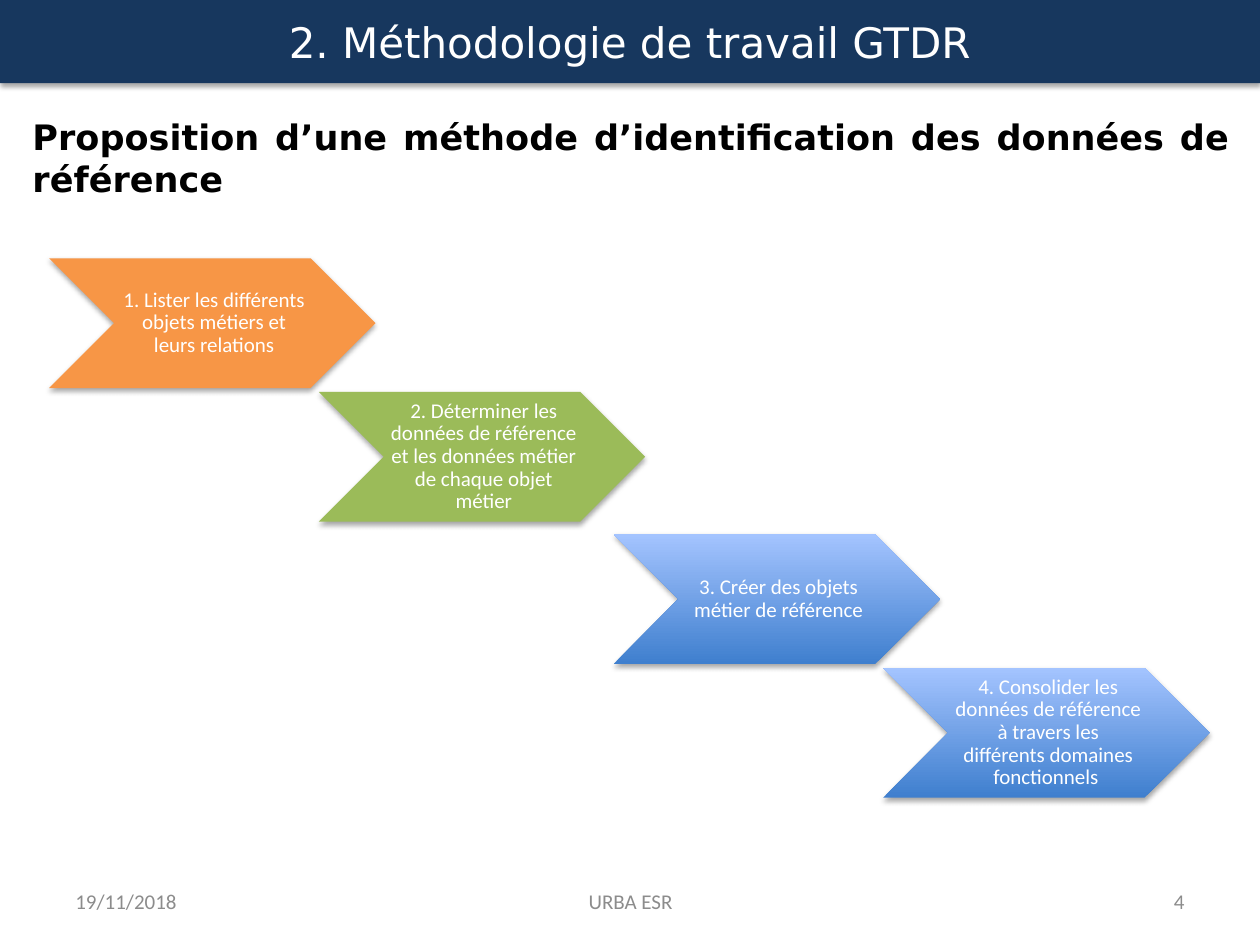
from lxml import etree
from pptx import Presentation
from pptx.dml.color import RGBColor
from pptx.enum import shapes, text
from pptx.oxml import ns
from pptx.util import Inches, Pt

HEADING = "2. Méthodologie de travail GTDR"
PROPOSITION = "Proposition d’une méthode d’identification des données de référence "
# wording, left, top, fill
STEPS = [
    ("1. Lister les différents objets métiers et leurs relations",
     0.39, 2.05, "orange"),
    ("2. Déterminer les données de référence et les données métier de chaque objet métier",
     2.53, 3.11, "green"),
    ("3. Créer des objets métier de référence",
     4.87, 4.24, "blue"),
    ("4. Consolider les données de référence à travers les différents domaines fonctionnels ",
     7.01, 5.3, "blue"),
]
# wording, left, width, alignment
FOOTER = [
    ("19/11/2018", 0.5, 2.33, text.PP_ALIGN.LEFT),
    ("URBA ESR", 3.42, 3.17, text.PP_ALIGN.CENTER),
    ("4", 7.17, 2.33, text.PP_ALIGN.RIGHT),
]
THEME = {
    "banner": "17375E", "white": "FFFFFF", "black": "000000", "grey": "8C8C8C",
    "fills": {"orange": ["F79646"], "green": ["9BBB59"], "blue": ["3F7FCE", "A4C4FF"]},
    "display": "DejaVu Sans", "body": "Calibri",
    "heading_size": 24, "proposition_size": 20, "small_size": 12,
}
STEP_WIDTH, STEP_HEIGHT = 2.59, 1.03
LABEL_INSET = 0.52
FOOTER_TOP, FOOTER_HEIGHT = 6.95, 0.4


def write(frame, wording, size, color, font, align, bold=False,
          anchor=text.MSO_ANCHOR.MIDDLE):
    frame.word_wrap = True
    frame.auto_size = text.MSO_AUTO_SIZE.NONE
    frame.vertical_anchor = anchor
    paragraph = frame.paragraphs[0]
    paragraph.alignment = align
    run = paragraph.add_run()
    run.text = wording
    run.font.size = Pt(size)
    run.font.name = font
    run.font.bold = bold
    run.font.color.rgb = RGBColor.from_string(color)
    return paragraph


def paint(shape, colors):
    """One colour fills solid; two make a gradient from bottom to top."""
    if len(colors) == 1:
        shape.fill.solid()
        shape.fill.fore_color.rgb = RGBColor.from_string(colors[0])
    else:
        shape.fill.gradient()
        shape.fill.gradient_angle = 90
        for stop, color in zip(shape.fill.gradient_stops, colors):
            stop.color.rgb = RGBColor.from_string(color)
    shape.line.fill.background()


def drop_shadow(shape):
    shape.shadow.inherit = False
    effects = shape._element.spPr.find(ns.qn("a:effectLst"))
    shadow = etree.SubElement(
        effects, ns.qn("a:outerShdw"), blurRad=str(Pt(3.1)), dist=str(Pt(1.8)),
        dir="5400000", rotWithShape="0")
    color = etree.SubElement(shadow, ns.qn("a:srgbClr"), val=THEME["black"])
    etree.SubElement(color, ns.qn("a:alpha"), val="35000")


def add_step(slide, wording, left, top, fill):
    group = slide.shapes.add_group_shape()
    chevron = group.shapes.add_shape(
        shapes.MSO_SHAPE.CHEVRON, Inches(left), Inches(top),
        Inches(STEP_WIDTH), Inches(STEP_HEIGHT))
    paint(chevron, THEME["fills"][fill])
    drop_shadow(chevron)

    label = group.shapes.add_textbox(
        Inches(left + LABEL_INSET), Inches(top),
        Inches(STEP_WIDTH - 2 * LABEL_INSET), Inches(STEP_HEIGHT)).text_frame
    label.margin_left = Inches(0.05)
    label.margin_top = label.margin_right = label.margin_bottom = Inches(0.02)
    paragraph = write(label, wording, THEME["small_size"], THEME["white"],
                      THEME["body"], text.PP_ALIGN.CENTER)
    paragraph.line_spacing = 0.9
    paragraph.space_after = Pt(4.2)


def main():
    deck = Presentation()
    deck.slide_width, deck.slide_height = Inches(10), Inches(7.5)
    slide = deck.slides.add_slide(deck.slide_layouts.get_by_name("Title Only"))

    heading = slide.shapes.title
    heading.left, heading.top = Inches(0), Inches(0)
    heading.width, heading.height = deck.slide_width, Inches(0.66)
    paint(heading, [THEME["banner"]])
    drop_shadow(heading)
    write(heading.text_frame, HEADING, THEME["heading_size"], THEME["white"],
          THEME["display"], text.PP_ALIGN.CENTER)

    proposition = slide.shapes.add_textbox(
        Inches(0.16), Inches(0.87), Inches(9.7), Inches(0.77))
    write(proposition.text_frame, PROPOSITION, THEME["proposition_size"],
          THEME["black"], THEME["display"], text.PP_ALIGN.JUSTIFY,
          bold=True, anchor=text.MSO_ANCHOR.TOP)

    for step in STEPS:
        add_step(slide, *step)

    for wording, left, width, align in FOOTER:
        note = slide.shapes.add_textbox(
            Inches(left), Inches(FOOTER_TOP), Inches(width), Inches(FOOTER_HEIGHT))
        write(note.text_frame, wording, THEME["small_size"], THEME["grey"],
              THEME["body"], align)

    deck.save("out.pptx")


if __name__ == "__main__":
    main()
